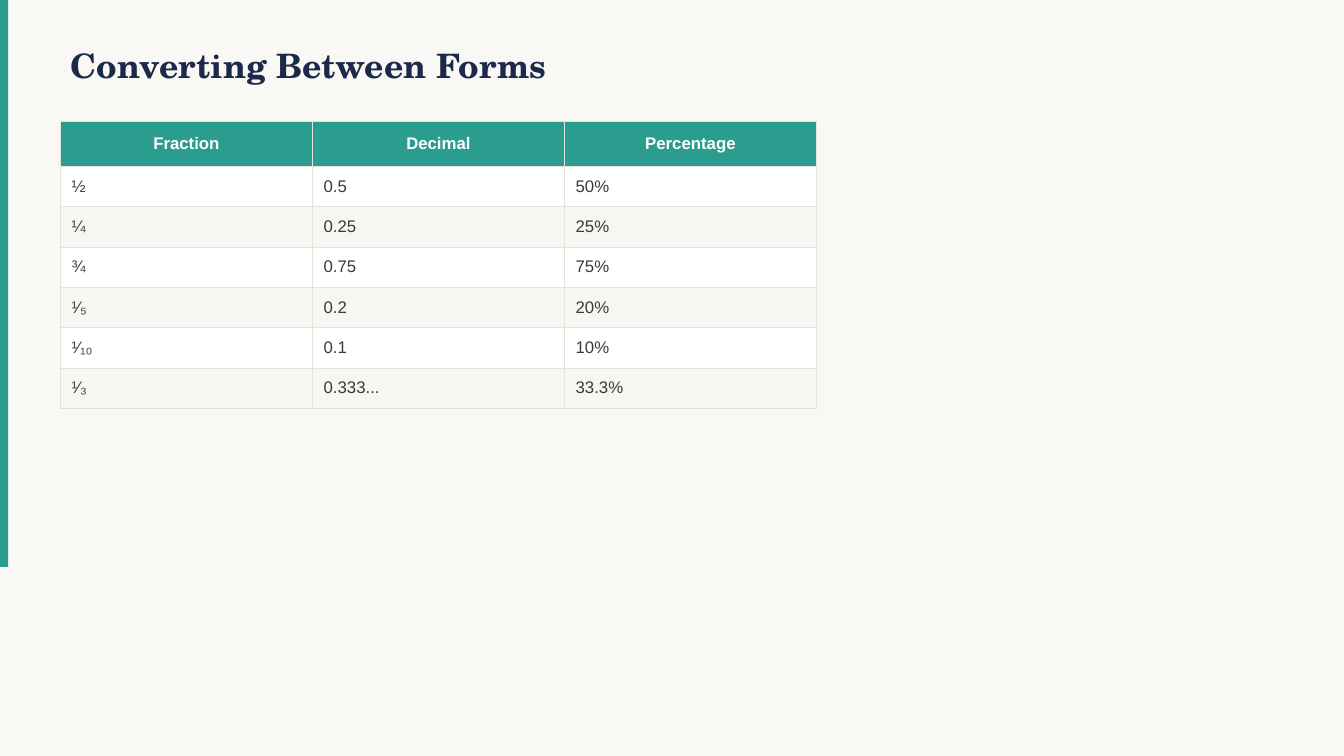
from lxml.etree import SubElement
from pptx import Presentation
from pptx.dml.color import RGBColor
from pptx.enum.shapes import MSO_SHAPE as Shape
from pptx.enum.text import MSO_ANCHOR as Anchor, MSO_AUTO_SIZE as AutoSize, PP_ALIGN as Align
from pptx.oxml.ns import qn
from pptx.util import Pt

CONVERSIONS = [
    ("Fraction", "Decimal", "Percentage"),
    ("½", "0.5", "50%"),
    ("¼", "0.25", "25%"),
    ("¾", "0.75", "75%"),
    ("¹⁄₅", "0.2", "20%"),
    ("¹⁄₁₀", "0.1", "10%"),
    ("¹⁄₃", "0.333...", "33.3%"),
]


def paint(color_format, hex_color):
    color_format.rgb = RGBColor.from_string(hex_color)


def fill(target, hex_color):
    target.fill.solid()
    paint(target.fill.fore_color, hex_color)


class SlideBuilder:
    """Holds the style and the slide being built."""
    teal, navy, ink, white = "2A9D8F", "1B2A4A", "3D3A36", "FFFFFF"
    paper, stripe, rule = "FAF8F5", "F8F6F3", "E5E2DC"
    title_font, body_font = "TeX Gyre Schola", "Arial"

    def __init__(self, deck):
        self.slide = deck.slides.add_slide(deck.slide_layouts[5])
        fill(self.slide.background, self.paper)

    def format_text(self, paragraph, font_name, size, color, bold, align):
        paragraph.alignment = align
        for run in paragraph.runs:
            run.font.name = font_name
            run.font.size = Pt(size)
            run.font.bold = bold
            paint(run.font.color, color)

    def accent_bar(self, left, top, width, height):
        bar = self.slide.shapes.add_shape(
            Shape.RECTANGLE, Pt(left), Pt(top), Pt(width), Pt(height))
        bar.shadow.inherit = False
        fill(bar, self.teal)
        bar.line.fill.background()

    def title(self, wording, left, top, width, height):
        heading = self.slide.shapes.title
        heading.left, heading.top = Pt(left), Pt(top)
        heading.width, heading.height = Pt(width), Pt(height)
        frame = heading.text_frame
        frame.text = wording
        frame.auto_size = AutoSize.NONE
        frame.vertical_anchor = Anchor.MIDDLE
        self.format_text(frame.paragraphs[0], self.title_font, 24, self.navy, True, Align.LEFT)

    def cell_borders(self, cell, width):
        properties = cell._tc.get_or_add_tcPr()
        for side in ("lnL", "lnR", "lnT", "lnB"):
            edge = SubElement(properties, qn(f"a:{side}"), w=str(Pt(width)))
            solid = SubElement(edge, qn("a:solidFill"))
            SubElement(solid, qn("a:srgbClr"), val=self.rule)

    def table(self, rows, left, top, column_width, header_height, row_height):
        columns = len(rows[0])
        height = header_height + row_height * (len(rows) - 1)
        grid = self.slide.shapes.add_table(
            len(rows), columns, Pt(left), Pt(top),
            Pt(column_width * columns), Pt(height)).table
        for column in grid.columns:
            column.width = Pt(column_width)
        for r, values in enumerate(rows):
            header = r == 0
            grid.rows[r].height = Pt(header_height if header else row_height)
            background = self.teal if header else self.white if r % 2 else self.stripe
            for c, value in enumerate(values):
                cell = grid.cell(r, c)
                cell.text_frame.text = value
                cell.vertical_anchor = Anchor.MIDDLE
                cell.margin_left = cell.margin_right = Pt(8)
                cell.margin_top = cell.margin_bottom = Pt(4)
                self.cell_borders(cell, 0.5)
                fill(cell, background)
                self.format_text(
                    cell.text_frame.paragraphs[0], self.body_font, 12,
                    self.white if header else self.ink, header,
                    Align.CENTER if header else Align.LEFT)


def main():
    deck = Presentation()
    deck.slide_width, deck.slide_height = Pt(960), Pt(540)
    builder = SlideBuilder(deck)
    builder.accent_bar(0, 0, 5.76, 405)
    builder.title("Converting Between Forms", 43.2, 21.6, 720, 50.4)
    builder.table(CONVERSIONS, 43.2, 86.4, column_width=180, header_height=32.4, row_height=28.8)
    deck.save("out.pptx")


if __name__ == "__main__":
    main()
